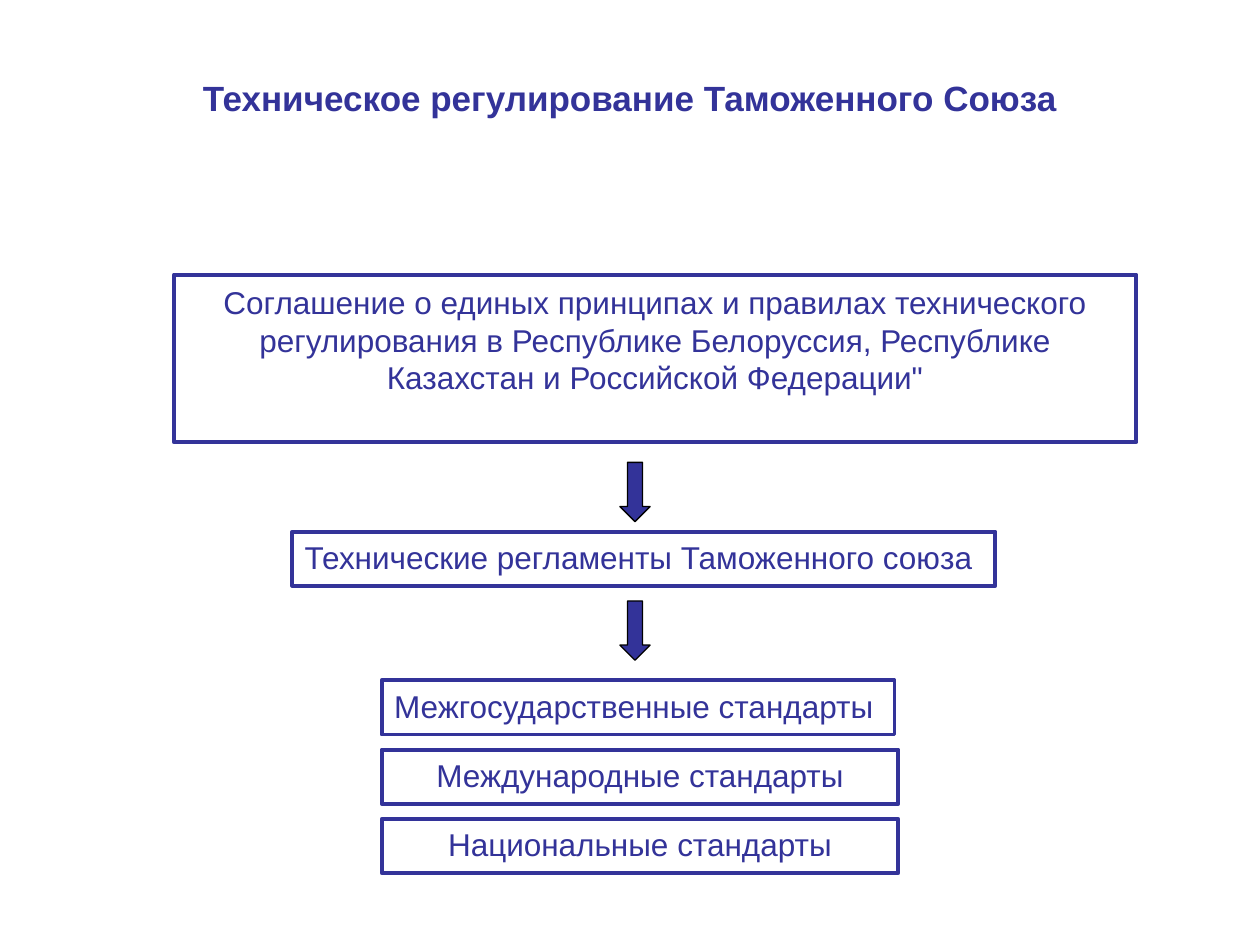
from dataclasses import dataclass

from pptx import Presentation
from pptx.dml.color import RGBColor
from pptx.enum.shapes import MSO_SHAPE as Shape
from pptx.enum.text import MSO_ANCHOR as Anchor, PP_ALIGN as Align
from pptx.util import Inches, Pt


@dataclass(frozen=True)
class Theme:
    font: str = "Arial"
    accent: RGBColor = RGBColor(0x33, 0x33, 0x99)
    outline: RGBColor = RGBColor(0, 0, 0)
    title_size: int = 20
    body_size: int = 18
    frame_width: float = 2.25
    arrow_width: float = 0.75


THEME = Theme()


def write(shape, text, size, align, anchor, bottom=0.05, bold=False):
    tf = shape.text_frame
    tf.word_wrap = True
    tf.vertical_anchor = anchor
    tf.margin_bottom = Inches(bottom)
    tf.text = text
    p = tf.paragraphs[0]
    p.alignment = align
    p.font.name = THEME.font
    p.font.size = Pt(size)
    p.font.bold = bold
    p.font.color.rgb = THEME.accent


def add_title(s, text):
    title = s.shapes.title
    title.left, title.top = Inches(0.5), Inches(0.3)
    title.width, title.height = Inches(9), Inches(1.25)
    # The deeper bottom margin lifts the text above the middle
    write(title, text, THEME.title_size, Align.CENTER, Anchor.MIDDLE, 0.36, True)


def add_box(s, text, left, top, width, height=0.43, align=Align.CENTER,
            anchor=Anchor.TOP, bottom=0.05):
    box = s.shapes.add_shape(Shape.RECTANGLE, Inches(left), Inches(top),
                             Inches(width), Inches(height))
    box.shadow.inherit = False
    box.fill.background()
    box.line.color.rgb = THEME.accent
    box.line.width = Pt(THEME.frame_width)
    write(box, text, THEME.body_size, align, anchor, bottom)


def add_down_arrow(s, top):
    arrow = s.shapes.add_shape(Shape.DOWN_ARROW, Inches(4.92), Inches(top),
                               Inches(0.24), Inches(0.47))
    arrow.shadow.inherit = False
    arrow.fill.solid()
    arrow.fill.fore_color.rgb = THEME.accent
    arrow.line.color.rgb = THEME.outline
    arrow.line.width = Pt(THEME.arrow_width)


def main():
    prs = Presentation()
    prs.slide_width, prs.slide_height = Inches(10), Inches(7.5)
    s = prs.slides.add_slide(prs.slide_layouts[5])

    add_title(s, "Техническое регулирование Таможенного Союза")

    # Agreement and the regulations under it
    add_box(s, "Соглашение о единых принципах и правилах технического "
               "регулирования в Республике Белоруссия, Республике "
               "Казахстан и Российской Федерации\"",
            1.38, 2.18, 7.64, 1.33, anchor=Anchor.MIDDLE, bottom=0.35)
    add_box(s, "Технические регламенты Таможенного союза",
            2.32, 4.22, 5.58, align=Align.LEFT)

    # Stack of standards
    standards = [
        ("Межгосударственные стандарты", 4.07, Align.LEFT),
        ("Международные стандарты", 4.1, Align.CENTER),
        ("Национальные стандарты", 4.1, Align.CENTER),
    ]
    for i, (text, width, align) in enumerate(standards):
        add_box(s, text, 3.03, 5.4 + 0.55 * i, width, align=align)

    # Arrows between the levels
    for top in (3.67, 4.77):
        add_down_arrow(s, top)

    prs.save("out.pptx")


if __name__ == "__main__":
    main()
